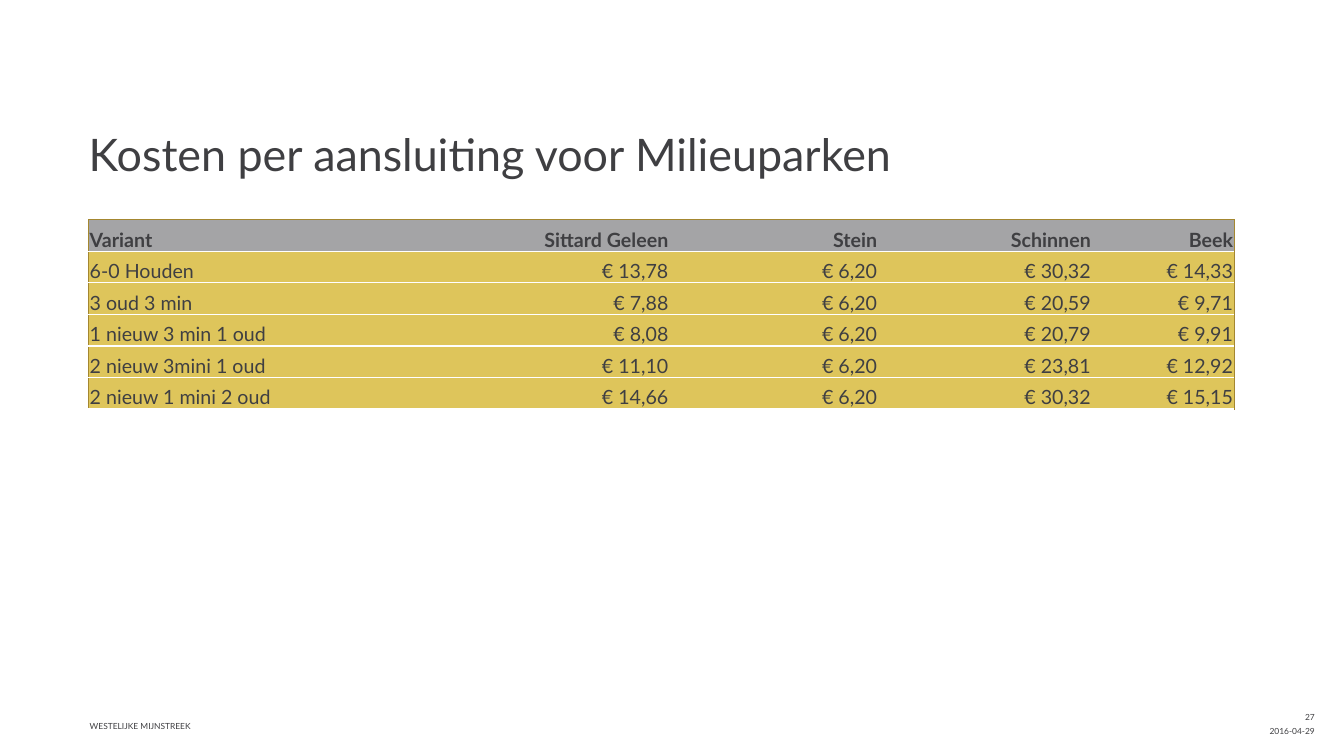
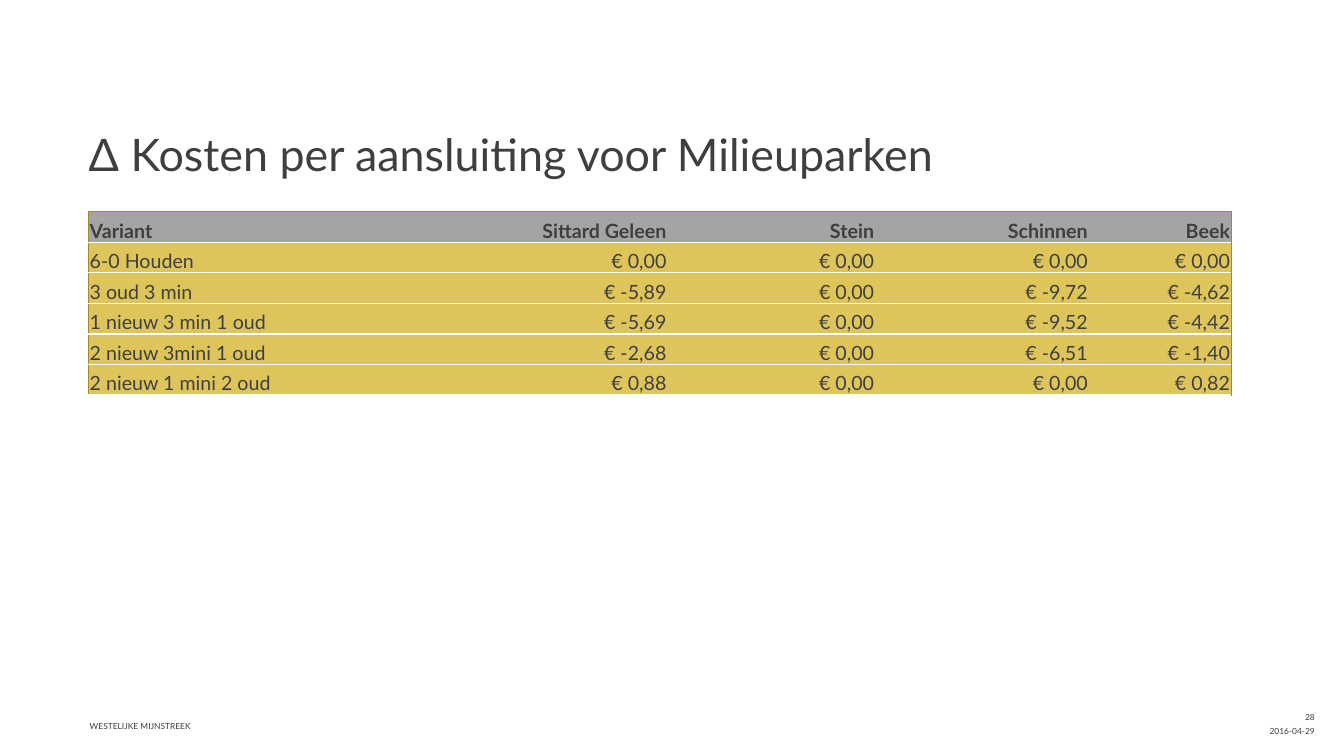
from dataclasses import dataclass

import lxml.etree
import pptx
import pptx.dml.color
import pptx.enum.text
import pptx.oxml.ns
import pptx.slide
import pptx.table
import pptx.text.text
import pptx.util

Inches = pptx.util.Inches
Align = pptx.enum.text.PP_ALIGN
Anchor = pptx.enum.text.MSO_ANCHOR
qn = pptx.oxml.ns.qn


@dataclass(frozen=True)
class Theme:
    font: str = "Lato"
    text: str = "3F3F42"
    header_fill: str = "A4A4A6"
    body_fill: str = "DEC55B"
    outline: str = "A48730"
    rule: str = "FFFFFF"
    title_size: float = 32
    table_size: float = 14
    footer_size: float = 6
    outline_width: float = 0.5
    rule_width: float = 1
    plain_table_style: str = "{2D5ABB26-0587-4C30-8999-92F81FD0307C}"


@dataclass(frozen=True)
class Box:
    left: float
    top: float
    width: float
    height: float


@dataclass(frozen=True)
class CostSlide:
    number: int
    title: str
    table_top: float
    table_height: float
    column_widths: tuple[float, ...]
    costs: tuple[tuple[str, ...], ...]


THEME = Theme()
TABLE_LEFT = 0.88
TITLE_BOX = Box(TABLE_LEFT, 0.83, 12.17, 0.97)
DATE_BOX = Box(10.04, 7.18, 3, 0.12)
NUMBER_BOX = Box(10.04, 6.99, 3, 0.17)
PROJECT_BOX = Box(0.89, 6.99, 2.1, 0.26)
PROJECT = "WESTELIJKE MIJNSTREEK"
DATE = "2016-04-29"
HEADER = ("Variant", "Sittard Geleen", "Stein", "Schinnen", "Beek")
VARIANTS = (
    "6-0 Houden",
    "3 oud 3 min",
    "1 nieuw 3 min 1 oud",
    "2 nieuw 3mini 1 oud",
    "2 nieuw 1 mini 2 oud",
)
COST_SLIDES = (
    CostSlide(
        27, "Kosten per aansluiting voor Milieuparken", 2.18, 1.88,
        (3.16, 2.6, 2.07, 2.12, 1.41),
        (
            ("13,78", "6,20", "30,32", "14,33"),
            ("7,88", "6,20", "20,59", "9,71"),
            ("8,08", "6,20", "20,79", "9,91"),
            ("11,10", "6,20", "23,81", "12,92"),
            ("14,66", "6,20", "30,32", "15,15"),
        ),
    ),
    CostSlide(
        28, "Δ Kosten per aansluiting voor Milieuparken", 2.1, 1.82,
        (3.15, 2.59, 2.06, 2.12, 1.41),
        (
            ("0,00", "0,00", "0,00", "0,00"),
            ("-5,89", "0,00", "-9,72", "-4,62"),
            ("-5,69", "0,00", "-9,52", "-4,42"),
            ("-2,68", "0,00", "-6,51", "-1,40"),
            ("0,88", "0,00", "0,00", "0,82"),
        ),
    ),
)


def write_text(
    frame: pptx.text.text.TextFrame,
    text: str,
    *,
    size: float,
    align: Align = Align.LEFT,
    bold: bool = False,
    line_spacing: float = 1.0,
) -> None:
    paragraph = frame.paragraphs[0]
    paragraph.alignment = align
    paragraph.line_spacing = line_spacing
    run = paragraph.add_run()
    run.text = text
    run.font.name = THEME.font
    run.font.size = pptx.util.Pt(size)
    run.font.bold = bold
    run.font.color.rgb = pptx.dml.color.RGBColor.from_string(THEME.text)


def add_text(slide: pptx.slide.Slide, box: Box, text: str, **text_format) -> None:
    """Add a bottom-anchored text box without insets."""
    shape = slide.shapes.add_textbox(
        Inches(box.left), Inches(box.top), Inches(box.width), Inches(box.height)
    )
    frame = shape.text_frame
    frame.word_wrap = True
    frame.vertical_anchor = Anchor.BOTTOM
    frame.margin_left = frame.margin_right = Inches(0)
    frame.margin_top = frame.margin_bottom = Inches(0)
    write_text(frame, text, **text_format)


def add_border(cell: pptx.table._Cell, side: str, color: str, width: float) -> None:
    """Draw one cell border; call in the order L, R, T, B and before the fill."""
    properties = cell._tc.get_or_add_tcPr()
    line = lxml.etree.SubElement(
        properties, qn(f"a:ln{side}"), w=str(int(pptx.util.Pt(width)))
    )
    fill = lxml.etree.SubElement(line, qn("a:solidFill"))
    lxml.etree.SubElement(fill, qn("a:srgbClr"), val=color)


def format_cell(cell: pptx.table._Cell, text: str, row: int, column: int) -> None:
    is_header = row == 0
    outline = (THEME.outline, THEME.outline_width)
    rule = (THEME.rule, THEME.rule_width)
    if column == 0:
        add_border(cell, "L", *outline)
    if column == len(HEADER) - 1:
        add_border(cell, "R", *outline)
    add_border(cell, "T", *(outline if is_header else rule))
    add_border(cell, "B", *rule)
    cell.fill.solid()
    cell.fill.fore_color.rgb = pptx.dml.color.RGBColor.from_string(
        THEME.header_fill if is_header else THEME.body_fill
    )
    cell.vertical_anchor = Anchor.BOTTOM
    cell.margin_left = cell.margin_right = cell.margin_top = Inches(0.01)
    cell.margin_bottom = Inches(0)
    write_text(
        cell.text_frame,
        text,
        size=THEME.table_size,
        align=Align.LEFT if column == 0 else Align.RIGHT,
        bold=is_header,
    )


def add_cost_table(slide: pptx.slide.Slide, content: CostSlide) -> None:
    rows = [HEADER] + [
        (variant, *(f"€ {cost}" for cost in costs))
        for variant, costs in zip(VARIANTS, content.costs)
    ]
    table = slide.shapes.add_table(
        len(rows),
        len(HEADER),
        Inches(TABLE_LEFT),
        Inches(content.table_top),
        Inches(sum(content.column_widths)),
        Inches(content.table_height),
    ).table
    table.horz_banding = False
    table._tbl.tblPr.find(qn("a:tableStyleId")).text = THEME.plain_table_style
    for column, width in zip(table.columns, content.column_widths):
        column.width = Inches(width)
    for row_index, texts in enumerate(rows):
        for column_index, text in enumerate(texts):
            cell = table.cell(row_index, column_index)
            format_cell(cell, text, row_index, column_index)


def add_footer(slide: pptx.slide.Slide, number: int) -> None:
    for box, text, align in (
        (DATE_BOX, DATE, Align.RIGHT),
        (PROJECT_BOX, PROJECT, Align.LEFT),
        (NUMBER_BOX, str(number), Align.RIGHT),
    ):
        add_text(slide, box, text, size=THEME.footer_size, align=align)


def main() -> None:
    presentation = pptx.Presentation()
    presentation.slide_width = Inches(13.33)
    presentation.slide_height = Inches(7.5)
    blank_layout = presentation.slide_layouts[6]
    for content in COST_SLIDES:
        slide = presentation.slides.add_slide(blank_layout)
        add_footer(slide, content.number)
        add_text(
            slide, TITLE_BOX, content.title, size=THEME.title_size, line_spacing=0.9
        )
        add_cost_table(slide, content)
    presentation.save("out.pptx")


if __name__ == "__main__":
    main()
